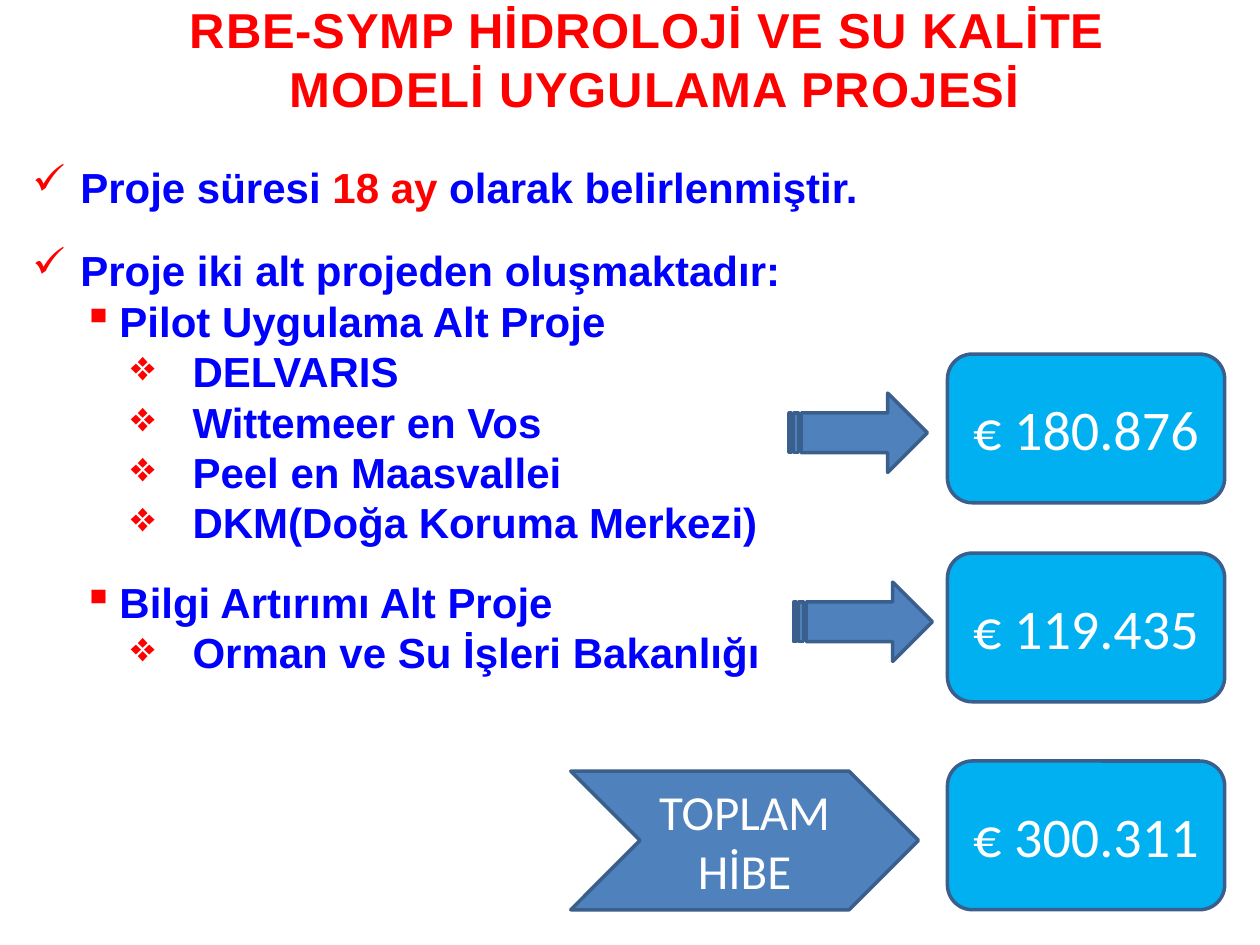
from dataclasses import dataclass

from lxml.etree import SubElement
from pptx import Presentation
from pptx.dml.color import RGBColor
from pptx.enum.shapes import MSO_SHAPE as Shape
from pptx.enum.text import MSO_ANCHOR as Anchor, MSO_AUTO_SIZE as AutoSize, PP_ALIGN as Align
from pptx.oxml.ns import qn
from pptx.util import Inches, Pt

WIDTH, HEIGHT = Inches(10), Inches(7.5)
RED, BLUE, WHITE = "FF0000", "0000FF", "FFFFFF"
STEEL, SKY, EDGE = "4F81BD", "00B0F0", "3A5F8C"


@dataclass
class Box:
    """A frame in percent of the slide's width and height."""
    left: float
    top: float
    width: float
    height: float

    def emu(self) -> tuple[int, ...]:
        """Return the frame as absolute lengths."""
        return (int(WIDTH * self.left / 100), int(HEIGHT * self.top / 100),
                int(WIDTH * self.width / 100), int(HEIGHT * self.height / 100))


@dataclass
class Level:
    """Bullet sign and indents of one outline level."""
    bullet: str
    margin: float
    hanging: float


@dataclass
class Item:
    """One outline line as coloured pieces, with the gap above it."""
    level: Level
    pieces: list[tuple[str, str]]
    gap: float = 0


@dataclass
class Block:
    """A filled shape with optional centred text."""
    kind: Shape
    box: Box
    fill: str
    text: str = ""
    size: int = 32


TOPIC = Level("✓", 0.38, 0.38)
PART = Level("▪", 0.69, 0.29)
PARTNER = Level("❖", 1.27, 0.49)

ITEMS = [
    Item(TOPIC, [("Proje süresi ", BLUE), ("18 ay ", RED), ("olarak belirlenmiştir.", BLUE)]),
    Item(TOPIC, [("Proje iki alt projeden oluşmaktadır:", BLUE)], gap=19),
    Item(PART, [("Pilot Uygulama Alt Proje", BLUE)]),
    *(Item(PARTNER, [(name, BLUE)]) for name in
      ("DELVARIS", "Wittemeer en Vos", "Peel en Maasvallei", "DKM(Doğa Koruma Merkezi)")),
    Item(PART, [("Bilgi Artırımı Alt Proje", BLUE)], gap=16.5),
    Item(PARTNER, [("Orman ve Su İşleri Bakanlığı", BLUE)]),
]

BLOCKS = [
    *(Block(Shape.STRIPED_RIGHT_ARROW, Box(left, top, 11, 8.4), STEEL)
      for left, top in ((62.6, 41.6), (63, 61.6))),
    *(Block(Shape.ROUNDED_RECTANGLE, Box(75.2, top, 22, 15.73), SKY, amount)
      for top, amount in ((37.47, "€ 180.876"), (58.53, "€ 119.435"), (80.53, "€ 300.311"))),
    Block(Shape.CHEVRON, Box(45.3, 81.6, 27.6, 14.67), STEEL, "TOPLAM\nHİBE", 28),
]


def color(value: str) -> RGBColor:
    """Turn a hex string into a colour."""
    return RGBColor.from_string(value)


def style(r, name: str, size: float, value: str, bold: bool = False) -> None:
    """Format one run."""
    r.font.name, r.font.size, r.font.bold = name, Pt(size), bold
    r.font.color.rgb = color(value)


def add_frame(s, box: Box):
    """Add a wrapping text box and return its text frame."""
    tf = s.shapes.add_textbox(*box.emu()).text_frame
    tf.word_wrap = True
    tf.auto_size = AutoSize.SHAPE_TO_FIT_TEXT
    return tf


def add_title(s, box: Box, text: str) -> None:
    """Add the spaced, centred heading."""
    tf = add_frame(s, box)
    tf.text = text
    for p in tf.paragraphs:
        p.alignment = Align.CENTER
        for r in p.runs:
            style(r, "Arial", 28, RED, True)
            r.font._element.set("spc", "50")


def set_bullet(p, level: Level) -> None:
    """Give a paragraph its hanging red bullet."""
    pPr = p._p.get_or_add_pPr()
    pPr.set("marL", str(Inches(level.margin)))
    pPr.set("indent", str(-Inches(level.hanging)))
    SubElement(SubElement(pPr, qn("a:buClr")), qn("a:srgbClr")).set("val", RED)
    SubElement(pPr, qn("a:buChar")).set("char", level.bullet)


def add_outline(s, box: Box, items: list[Item]) -> None:
    """Add the bulleted outline."""
    tf = add_frame(s, box)
    for i, item in enumerate(items):
        p = tf.add_paragraph() if i else tf.paragraphs[0]
        p.alignment = Align.JUSTIFY
        if item.gap:
            p.space_before = Pt(item.gap)
        set_bullet(p, item.level)
        for text, value in item.pieces:
            r = p.add_run()
            r.text = text
            style(r, "Arial", 24, value, True)


def add_block(s, block: Block) -> None:
    """Draw one filled shape and its text."""
    sp = s.shapes.add_shape(block.kind, *block.box.emu())
    sp.shadow.inherit = False
    sp.fill.solid()
    sp.fill.fore_color.rgb = color(block.fill)
    sp.line.color.rgb = color(EDGE)
    sp.line.width = Pt(2)
    if not block.text:
        return
    tf = sp.text_frame
    tf.text = block.text
    tf.vertical_anchor = Anchor.MIDDLE
    for p in tf.paragraphs:
        p.alignment = Align.CENTER
        for r in p.runs:
            style(r, "Calibri", block.size, WHITE)


def main() -> None:
    """Build and save the slide."""
    prs = Presentation()
    prs.slide_width, prs.slide_height = WIDTH, HEIGHT
    s = prs.slides.add_slide(prs.slide_layouts[6])
    add_outline(s, Box(1.6, 16.4, 93.3, 57), ITEMS)
    add_title(s, Box(4.3, -0.67, 95.3, 13.87),
              "RBE-SYMP HİDROLOJİ VE SU KALİTE \nMODELİ UYGULAMA PROJESİ")
    for block in BLOCKS:
        add_block(s, block)
    prs.save("out.pptx")


if __name__ == "__main__":
    main()
